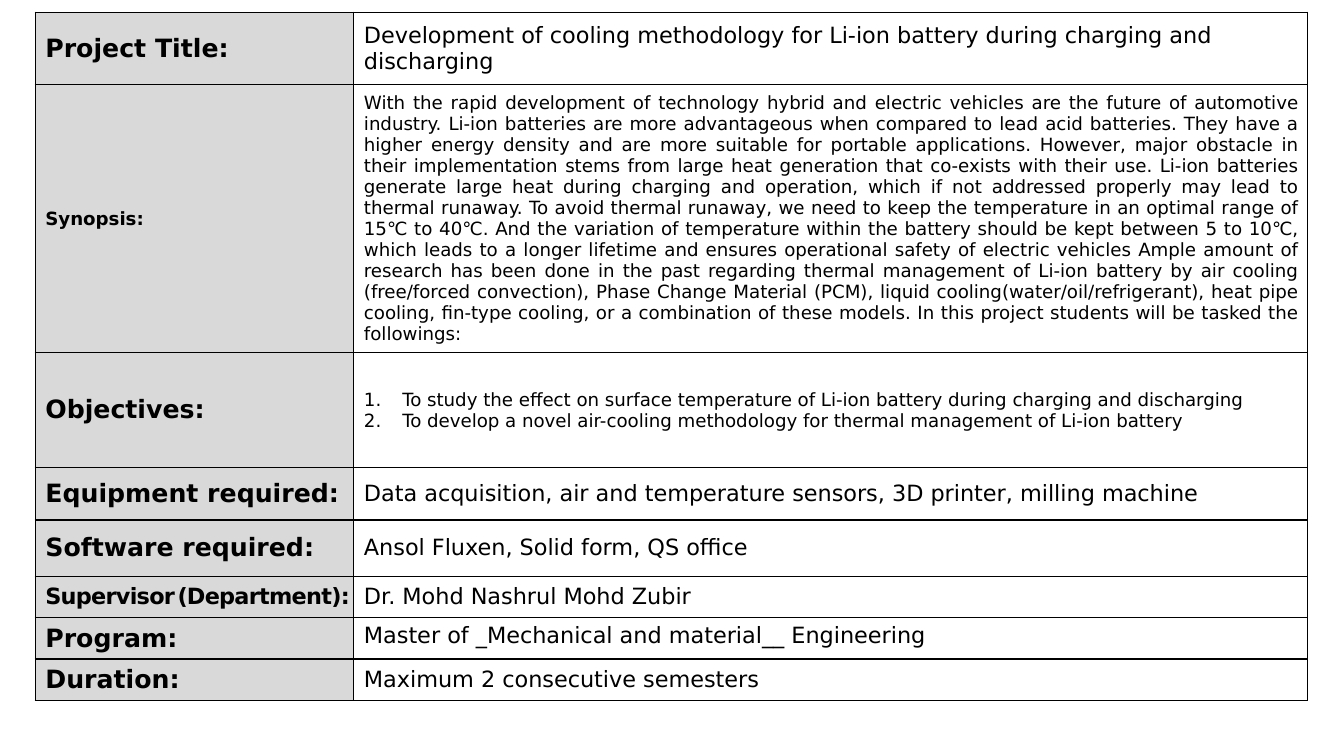
from lxml import etree
from pptx import Presentation
from pptx.dml.color import RGBColor
from pptx.enum import text
from pptx.oxml import ns
from pptx.util import Inches, Pt

BLACK = RGBColor(0x00, 0x00, 0x00)
LABEL_GREY = RGBColor(0xD9, 0xD9, 0xD9)
FONT = "DejaVu Sans"

COLUMN_WIDTHS = [3.16, 9.46]
ROW_HEIGHTS = [0.72, 2.66, 1.14, 0.52, 0.56, 0.41, 0.41, 0.41]

SYNOPSIS = " ".join([
    "With the rapid development of technology hybrid and electric vehicles are the future of "
    "automotive industry.",
    "Li-ion batteries are more advantageous when compared to lead acid batteries.",
    "They have a higher energy density and are more suitable for portable applications.",
    "However, major obstacle in their implementation stems from large heat generation that "
    "co-exists with their use.",
    "Li-ion batteries generate large heat during charging and operation, which if not "
    "addressed properly may lead to thermal runaway.",
    "To avoid thermal runaway, we need to keep the temperature in an optimal range of "
    "15℃ to 40℃.",
    "And the variation of temperature within the battery should be kept between 5 to 10℃, "
    "which leads to a longer lifetime and ensures operational safety of electric vehicles",
    "Ample amount of research has been done in the past regarding thermal management of "
    "Li-ion battery by air cooling (free/forced convection), Phase Change Material (PCM), "
    "liquid cooling(water/oil/refrigerant), heat pipe cooling, fin-type cooling, or a "
    "combination of these models.",
    "In this project students will be tasked the followings:",
])
OBJECTIVES = [
    "To study the effect on surface temperature of Li-ion battery during charging and discharging",
    "To develop a novel air-cooling methodology for thermal management of Li-ion battery",
]

# Each row: label runs (text, size), then detail paragraphs and their size
ROWS = [
    ([("Project Title:", 18)],
     ["Development of cooling methodology for Li-ion battery during charging and discharging"], 16),
    ([("Synopsis:", 13)], [SYNOPSIS], 13),
    ([("Objectives:", 18)], OBJECTIVES, 13),
    ([("Equipment required:", 18)],
     ["Data acquisition, air and temperature sensors, 3D printer, milling machine"], 16),
    ([("Software required:", 18)], ["Ansol Fluxen, Solid form, QS office"], 16),
    ([("Supervisor", 16), (" ", 5), ("(Department):", 16)], ["Dr. Mohd Nashrul Mohd Zubir"], 16),
    ([("Program:", 18)], ["Master of _Mechanical and material__ Engineering"], 16),
    ([("Duration:", 18)], ["Maximum 2 consecutive semesters"], 16),
]
SYNOPSIS_ROW, OBJECTIVES_ROW, SUPERVISOR_ROW, PROGRAM_ROW = 1, 2, 5, 6


def add_span(para, words, size, bold=False):
    span = para.add_run()
    span.text = words
    span.font.name = FONT
    span.font.size = Pt(size)
    span.font.bold = bold
    span.font.color.rgb = BLACK
    return span


def add_borders(cell):
    properties = cell._tc.get_or_add_tcPr()
    for index, side in enumerate(("lnL", "lnR", "lnT", "lnB")):
        line = etree.Element(ns.qn(f"a:{side}"), w=str(Pt(1)))
        fill = etree.SubElement(line, ns.qn("a:solidFill"))
        etree.SubElement(fill, ns.qn("a:srgbClr"), val=str(BLACK))
        properties.insert(index, line)


def number_paragraph(para):
    properties = para._p.get_or_add_pPr()
    properties.set("marL", str(Inches(0.38)))
    properties.set("indent", str(Inches(-0.38)))
    etree.SubElement(properties, ns.qn("a:buFont"), typeface=FONT)
    etree.SubElement(properties, ns.qn("a:buAutoNum"), type="arabicPeriod")


def fill_label(cell, spans, tight):
    cell.fill.solid()
    cell.fill.fore_color.rgb = LABEL_GREY
    cell.vertical_anchor = text.MSO_ANCHOR.MIDDLE
    para = cell.text_frame.paragraphs[0]
    for words, size in spans:
        span = add_span(para, words, size, bold=True)
        if tight:
            span._r.get_or_add_rPr().set("spc", "-50")
    if tight:
        cell.margin_right = 0
    add_borders(cell)


def fill_detail(cell, paragraphs, size, row):
    cell.fill.background()
    top = row == PROGRAM_ROW
    cell.vertical_anchor = text.MSO_ANCHOR.TOP if top else text.MSO_ANCHOR.MIDDLE
    frame = cell.text_frame
    for index, words in enumerate(paragraphs):
        para = frame.add_paragraph() if index else frame.paragraphs[0]
        if row == SYNOPSIS_ROW:
            para.alignment = text.PP_ALIGN.JUSTIFY
        if row == OBJECTIVES_ROW:
            number_paragraph(para)
        add_span(para, words, size)
    add_borders(cell)


def add_project_table(page):
    frame = page.shapes.add_table(
        len(ROWS), len(COLUMN_WIDTHS), Inches(0.35), Inches(0.12),
        Inches(sum(COLUMN_WIDTHS)), Inches(sum(ROW_HEIGHTS)))
    table = frame.table
    table.first_row = table.horz_banding = False
    for column, width in zip(table.columns, COLUMN_WIDTHS):
        column.width = Inches(width)
    for row, height in zip(table.rows, ROW_HEIGHTS):
        row.height = Inches(height)
    for row, (label, paragraphs, size) in enumerate(ROWS):
        fill_label(table.cell(row, 0), label, tight=row == SUPERVISOR_ROW)
        fill_detail(table.cell(row, 1), paragraphs, size, row)


def main():
    deck = Presentation()
    deck.slide_width, deck.slide_height = Inches(13.33), Inches(7.5)
    page = deck.slides.add_slide(deck.slide_layouts[6])
    add_project_table(page)
    deck.save("out.pptx")


if __name__ == "__main__":
    main()
